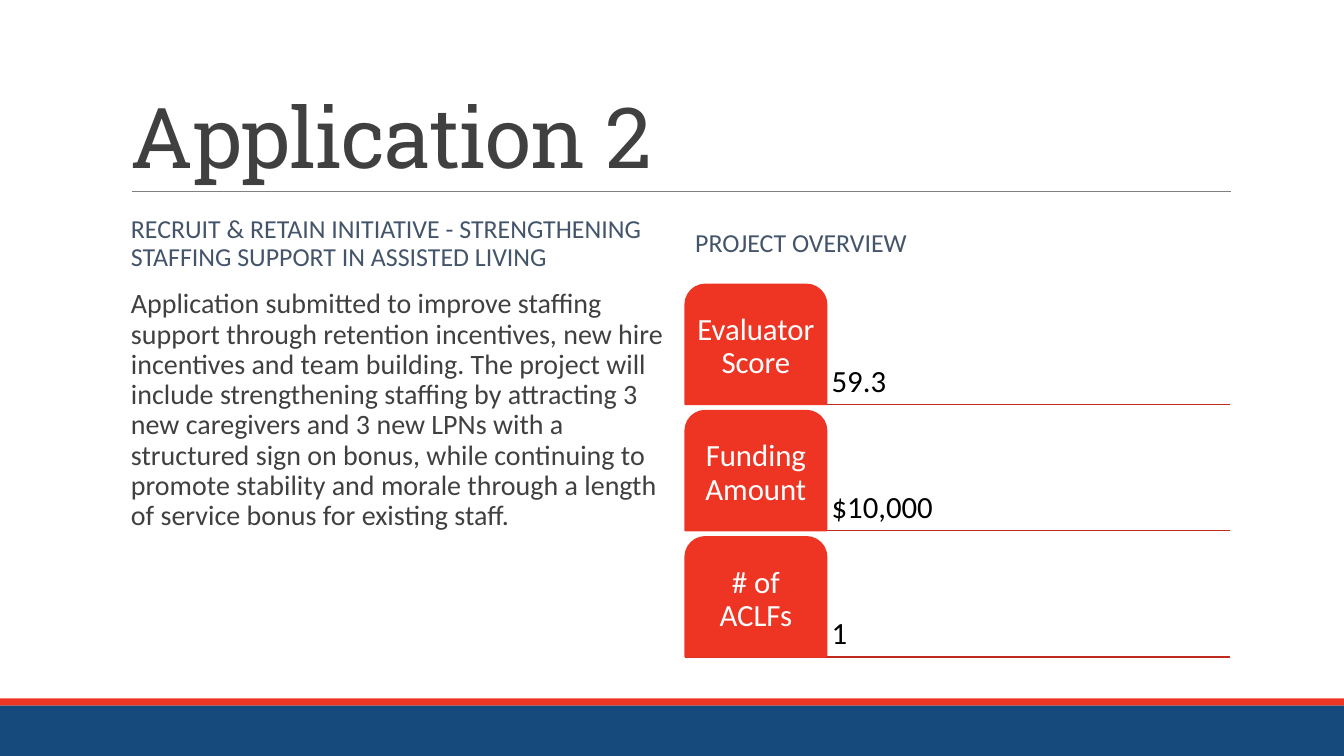
from lxml import etree
from pptx import Presentation
from pptx.dml.color import RGBColor
from pptx.enum import shapes, text
from pptx.oxml.ns import qn
from pptx.util import Cm, Pt

RED, NAVY, DARK_RED = "EE3524", "174A7C", "BF2A1D"
SLATE, CHARCOAL, GREY = "44546A", "404040", "808080"
WIDTH, HEIGHT = 33.87, 19.05
INSET = 0.25

SUMMARY = (
    "Application submitted to improve staffing support through retention "
    "incentives, new hire incentives and team building. The project will include "
    "strengthening staffing by attracting 3 new caregivers and 3 new LPNs with a "
    "structured sign on bonus, while continuing to promote stability and morale "
    "through a length of service bonus for existing staff."
)
FACTS = [("Evaluator Score", "59.3"), ("Funding Amount", "$10,000"), ("# of ACLFs", "1")]


def rgb(value):
    return RGBColor.from_string(value)


def add_block(s, kind, x, y, w, h, color):
    sp = s.shapes.add_shape(kind, Cm(x), Cm(y), Cm(w), Cm(h))
    sp.shadow.inherit = False
    sp.fill.solid()
    sp.fill.fore_color.rgb = rgb(color)
    sp.line.fill.background()
    return sp


def add_rule(s, x, y, w, color, weight):
    ln = s.shapes.add_connector(shapes.MSO_CONNECTOR.STRAIGHT,
                                Cm(x), Cm(y), Cm(x + w), Cm(y))
    ln.line.color.rgb = rgb(color)
    ln.line.width = Pt(weight)
    etree.SubElement(ln._element.spPr, qn("a:effectLst"))


def write(sp, words, size, color, anchor, font="Calibri", align=text.PP_ALIGN.LEFT,
          spacing=0.9, side=INSET):
    tf = sp.text_frame
    tf.word_wrap = True
    tf.vertical_anchor = anchor
    tf.margin_left = tf.margin_right = Cm(side)
    tf.margin_top = tf.margin_bottom = Cm(0.13)
    p = tf.paragraphs[0]
    p.alignment = align
    p.line_spacing = spacing
    r = p.add_run()
    r.text = words
    r.font.name = font
    r.font.size = Pt(size)
    r.font.color.rgb = rgb(color)
    return r


def add_text(s, x, y, w, h, *args, **style):
    return write(s.shapes.add_textbox(Cm(x), Cm(y), Cm(w), Cm(h)), *args, **style)


def footer(s, y):
    add_block(s, shapes.MSO_SHAPE.RECTANGLE, 0, y, WIDTH, 0.18, RED)
    add_block(s, shapes.MSO_SHAPE.RECTANGLE, 0, y + 0.18, WIDTH, HEIGHT - y - 0.18, NAVY)


def title(s, x, y, w, h, words):
    r = add_text(s, x, y, w, h, words, 60, CHARCOAL, text.MSO_ANCHOR.BOTTOM,
                 font="Roboto Slab", spacing=0.85)
    r.font._element.set("spc", "-50")
    add_rule(s, x + 0.28, y + h, w - INSET, GREY, 0.5)


def heading(s, x, y, w, h, words):
    add_text(s, x, y, w, h, words, 18.5, SLATE, text.MSO_ANCHOR.MIDDLE)


def fact_list(s, x, y, w, h, facts, gap=0.16):
    row_h = (h - gap * (len(facts) - 1)) / len(facts)
    label_w = 3.56
    for i, (label, value) in enumerate(facts):
        top = y + i * (row_h + gap)
        add_rule(s, x, top + row_h, w, DARK_RED, 1.25)
        add_text(s, x + label_w, top, w - label_w, row_h, value, 22, "000000",
                 text.MSO_ANCHOR.BOTTOM, side=0.13)
        tab = add_block(s, shapes.MSO_SHAPE.ROUND_2_SAME_RECTANGLE,
                        x, top, label_w, row_h, RED)
        tab.adjustments[0] = 0.167
        tab.line.color.rgb = rgb(RED)
        tab.line.width = Pt(1.25)
        write(tab, label, 22, "FFFFFF", text.MSO_ANCHOR.MIDDLE,
              align=text.PP_ALIGN.CENTER, side=0.13)


def main():
    prs = Presentation()
    prs.slide_width, prs.slide_height = Cm(WIDTH), Cm(HEIGHT)
    s = prs.slides.add_slide(prs.slide_layouts[6])

    left, right, col_w = 3.05, 17.27, 13.72
    head_y, head_h = 5.12, 2.05
    body_y, body_h = head_y + head_h, 9.38

    # Frame
    footer(s, 17.6)
    title(s, left, 0.79, 27.94, 4.03, "Application 2")

    # Left column: initiative summary
    heading(s, left, head_y, col_w, head_h,
            "RECRUIT & RETAIN INITIATIVE - STRENGTHENING STAFFING SUPPORT IN ASSISTED LIVING")
    # The right inset is dropped by widening the box
    add_text(s, left, body_y, col_w + INSET, body_h, SUMMARY, 20, CHARCOAL,
             text.MSO_ANCHOR.TOP)

    # Right column: key facts
    heading(s, right, head_y, col_w, head_h, "PROJECT OVERVIEW")
    fact_list(s, right, body_y, col_w, body_h, FACTS)

    prs.save("out.pptx")


if __name__ == "__main__":
    main()
